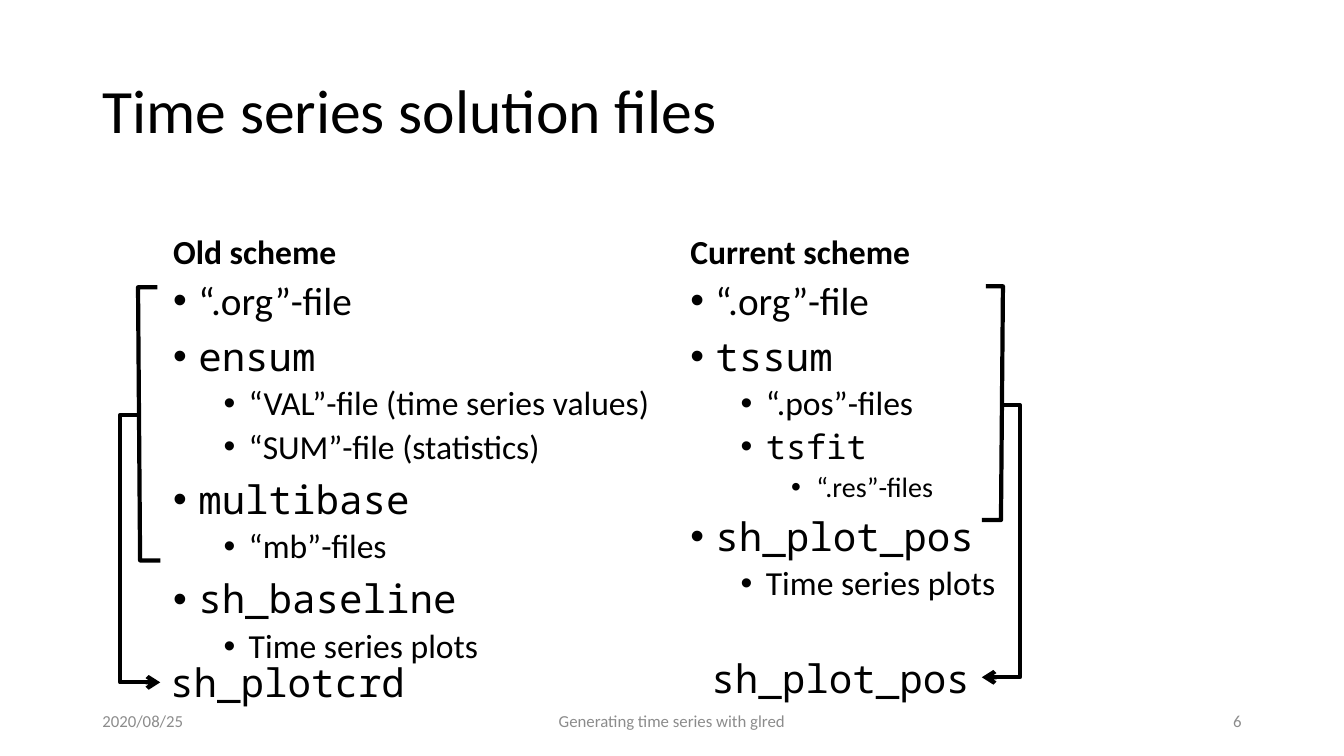
"""Build the slide comparing old and current time series solution files."""
from lxml import etree
from pptx import Presentation
from pptx.dml.color import RGBColor
from pptx.enum.text import MSO_ANCHOR, PP_ALIGN
from pptx.oxml.ns import qn
from pptx.util import Pt

TOP, MIDDLE, BOTTOM = MSO_ANCHOR.TOP, MSO_ANCHOR.MIDDLE, MSO_ANCHOR.BOTTOM
LEFT, CENTER, RIGHT = PP_ALIGN.LEFT, PP_ALIGN.CENTER, PP_ALIGN.RIGHT

THEME = {
    "sans": "Calibri", "mono": "Noto Sans Mono",
    "ink": RGBColor(0x00, 0x00, 0x00), "muted": RGBColor(0x8C, 0x8C, 0x8C),
    "title": 44, "heading": 24, "levels": (28, 24, 20), "footer": 12,
    "before": (10, 5, 5), "line": 3,
}

TITLE = "Time series solution files"
SCHEMES = [
    {
        "heading": "Old scheme", "left": 116.6, "width": 355,
        "items": [
            (0, "sans", "“.org”-file"),
            (0, "mono", "ensum"),
            (1, "sans", "“VAL”-file (time series values)"),
            (1, "sans", "“SUM”-file (statistics)"),
            (0, "mono", "multibase"),
            (1, "sans", "“mb”-files"),
            (0, "mono", "sh_baseline"),
            (1, "sans", "Time series plots"),
        ],
        "result": ("sh_plotcrd", (114.5, 466.6, 183.6, 41)),
        "bracket": [(112.5, 205.2), (98.6, 205.2), (100.1, 400.3), (114.5, 400.3)],
        "arrow": [(99.4, 296.6), (85.7, 296.6), (85.7, 487.4), (114.5, 487.4)],
    },
    {
        "heading": "Current scheme", "left": 486, "width": 408.2,
        "items": [
            (0, "sans", "“.org”-file"),
            (0, "mono", "tssum"),
            (1, "sans", "“.pos”-files"),
            (1, "mono", "tsfit"),
            (2, "sans", "“.res”-files"),
            (0, "mono", "sh_plot_pos"),
            (1, "sans", "Time series plots"),
        ],
        "result": ("sh_plot_pos", (501.1, 463.7, 200.9, 41)),
        "bracket": [(704.2, 204.5), (716.4, 204.5), (715, 371.5), (701.3, 371.5)],
        "arrow": [(715.7, 289.4), (728.6, 289.4), (728.6, 483.8), (701.3, 483.8)],
    },
]
FOOTER = [
    ("2020/08/25", 66, 216, LEFT),
    ("Generating time series with glred", 318, 324, CENTER),
    ("6", 678, 216, RIGHT),
]
HEADING_TOP, HEADING_HEIGHT = 132.4, 64.9
LIST_TOP, LIST_HEIGHT = 197.3, 290
INDENT_STEP, HANGING = 36, 18


def add_box(page, place, anchor=TOP, wrap=True):
    """Add an empty text box and return its text frame."""
    frame = page.shapes.add_textbox(*map(Pt, place)).text_frame
    frame.word_wrap = wrap
    frame.vertical_anchor = anchor
    return frame


def write(para, text, size, font="sans", color="ink", bold=False):
    """Put one formatted line of text in a paragraph."""
    para.text = text
    span = para.runs[0].font
    span.size, span.name, span.bold = Pt(size), THEME[font], bold
    span.color.rgb = THEME[color]


def add_list(page, place, items):
    """Add a bulleted list of (level, font, text) items."""
    frame = add_box(page, place)
    for index, (level, font, text) in enumerate(items):
        para = frame.add_paragraph() if index else frame.paragraphs[0]
        write(para, text, THEME["levels"][level], font)
        para.level = level
        para.line_spacing = 0.9
        para.space_before = Pt(THEME["before"][level])
        props = para._p.get_or_add_pPr()
        props.set("marL", str(Pt(HANGING + level * INDENT_STEP)))
        props.set("indent", str(-Pt(HANGING)))
        etree.SubElement(props, qn("a:buFont")).set("typeface", "Arial")
        etree.SubElement(props, qn("a:buChar")).set("char", "•")


def add_path(page, points, arrow=False):
    """Draw an open line through the points."""
    start, *rest = [(Pt(x), Pt(y)) for x, y in points]
    builder = page.shapes.build_freeform(*start)
    builder.add_line_segments(rest, close=False)
    path = builder.convert_to_shape()
    path.shadow.inherit = False
    path.fill.background()
    path.line.color.rgb = THEME["ink"]
    path.line.width = Pt(THEME["line"])
    if arrow:
        line = path.line._get_or_add_ln()
        etree.SubElement(line, qn("a:tailEnd")).set("type", "arrow")


def main():
    """Compose and save the slide."""
    deck = Presentation()
    deck.slide_width, deck.slide_height = Pt(960), Pt(540)
    page = deck.slides.add_slide(deck.slide_layouts[6])

    para = add_box(page, (66, 28.8, 828, 104.4), MIDDLE).paragraphs[0]
    write(para, TITLE, THEME["title"])
    para.line_spacing = 0.9

    for scheme in SCHEMES:
        left, width = scheme["left"], scheme["width"]
        place = (left, HEADING_TOP, width, HEADING_HEIGHT)
        para = add_box(page, place, BOTTOM).paragraphs[0]
        write(para, scheme["heading"], THEME["heading"], bold=True)
        para.line_spacing = 0.9
        para.space_before = Pt(THEME["before"][0])
        add_list(page, (left, LIST_TOP, width, LIST_HEIGHT), scheme["items"])
        name, place = scheme["result"]
        para = add_box(page, place, wrap=False).paragraphs[0]
        write(para, name, THEME["levels"][0], "mono")
        add_path(page, scheme["bracket"])
        add_path(page, scheme["arrow"], arrow=True)

    for text, left, width, align in FOOTER:
        para = add_box(page, (left, 500.5, width, 28.8), MIDDLE).paragraphs[0]
        write(para, text, THEME["footer"], color="muted")
        para.alignment = align

    deck.save("out.pptx")


if __name__ == "__main__":
    main()
